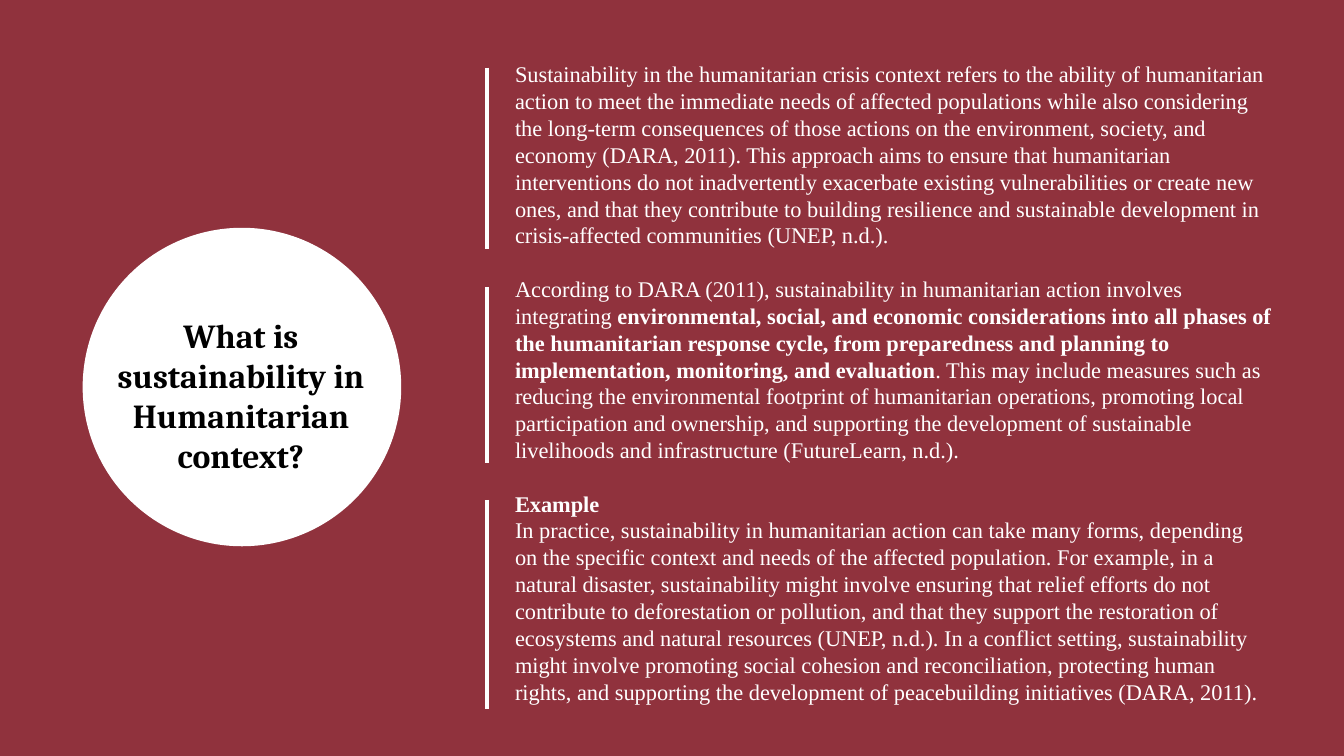
from dataclasses import dataclass

import lxml.etree
import pptx
import pptx.dml.color
import pptx.enum.shapes
import pptx.enum.text
import pptx.oxml.ns
import pptx.util

Inches = pptx.util.Inches
Pt = pptx.util.Pt
Color = pptx.dml.color.RGBColor


@dataclass(frozen=True)
class Theme:
    background: Color = Color(0x90, 0x32, 0x3D)
    light: Color = Color(0xFF, 0xFF, 0xFF)
    dark: Color = Color(0, 0, 0)
    title_font: str = "Cambria"
    body_font: str = "Times New Roman"
    title_size: int = 24
    body_size: int = 16
    section_gap: float = 19
    rule_width: float = 2.25


@dataclass(frozen=True)
class Span:
    text: str
    bold: bool = False


@dataclass(frozen=True)
class Passage:
    spans: tuple[Span, ...]
    opens_section: bool = False


@dataclass(frozen=True)
class Rule:
    top: float
    bottom: float


THEME = Theme()
WIDTH, HEIGHT = 13.33, 7.5
RULE_X = 4.83
RULES = (Rule(0.67, 2.47), Rule(2.85, 4.59), Rule(4.96, 7.03))
TITLE = Passage((Span("What is sustainability in Humanitarian context?", True),))
PASSAGES = (
    Passage((Span(
        "Sustainability in the humanitarian crisis context refers to the ability of "
        "humanitarian action to meet the immediate needs of affected populations while "
        "also considering the long-term consequences of those actions on the environment, "
        "society, and economy (DARA, 2011). This approach aims to ensure that humanitarian "
        "interventions do not inadvertently exacerbate existing vulnerabilities or create "
        "new ones, and that they contribute to building resilience and sustainable "
        "development in crisis-affected communities (UNEP, n.d.)."),)),
    Passage((
        Span("According to DARA (2011), sustainability in humanitarian action involves "
             "integrating "),
        Span("environmental, social, and economic considerations into all phases of the "
             "humanitarian response cycle, from preparedness and planning to "
             "implementation, monitoring, and evaluation", True),
        Span(". This may include measures such as reducing the environmental footprint of "
             "humanitarian operations, promoting local participation and ownership, and "
             "supporting the development of sustainable livelihoods and infrastructure "
             "(FutureLearn, n.d.)."),
    ), opens_section=True),
    Passage((Span("Example", True),), opens_section=True),
    Passage((Span(
        "In practice, sustainability in humanitarian action can take many forms, depending "
        "on the specific context and needs of the affected population. For example, in a "
        "natural disaster, sustainability might involve ensuring that relief efforts do not "
        "contribute to deforestation or pollution, and that they support the restoration of "
        "ecosystems and natural resources (UNEP, n.d.). In a conflict setting, "
        "sustainability might involve promoting social cohesion and reconciliation, "
        "protecting human rights, and supporting the development of peacebuilding "
        "initiatives (DARA, 2011)."),)),
)


def add_filled_shape(page, kind, left: float, top: float, width: float, height: float,
                     color: Color) -> None:
    shape = page.shapes.add_shape(
        kind, Inches(left), Inches(top), Inches(width), Inches(height))
    shape.shadow.inherit = False
    shape.fill.solid()
    shape.fill.fore_color.rgb = color
    shape.line.fill.background()


def add_text(page, left: float, top: float, width: float, height: float,
             passages: tuple[Passage, ...], font: str, size: float, color: Color,
             alignment) -> None:
    box = page.shapes.add_textbox(
        Inches(left), Inches(top), Inches(width), Inches(height))
    frame = box.text_frame
    frame.word_wrap = True
    frame.auto_size = pptx.enum.text.MSO_AUTO_SIZE.SHAPE_TO_FIT_TEXT
    for index, passage in enumerate(passages):
        paragraph = frame.add_paragraph() if index else frame.paragraphs[0]
        paragraph.alignment = alignment
        if passage.opens_section:
            paragraph.space_before = Pt(THEME.section_gap)
        paragraph.font.name = font
        paragraph.font.size = Pt(size)
        paragraph.font.color.rgb = color
        if len(passage.spans) == 1:
            paragraph.font.bold = passage.spans[0].bold
        for span in passage.spans:
            run = paragraph.add_run()
            run.text = span.text
            if len(passage.spans) > 1:
                run.font.bold = span.bold


def add_rule(page, rule: Rule) -> None:
    line = page.shapes.add_connector(
        pptx.enum.shapes.MSO_CONNECTOR.STRAIGHT,
        Inches(RULE_X), Inches(rule.top), Inches(RULE_X), Inches(rule.bottom))
    line.line.color.rgb = THEME.light
    line.line.width = Pt(THEME.rule_width)
    properties = line.element.find(pptx.oxml.ns.qn("p:spPr"))
    lxml.etree.SubElement(properties, pptx.oxml.ns.qn("a:effectLst"))


def main() -> None:
    deck = pptx.Presentation()
    deck.slide_width = Inches(WIDTH)
    deck.slide_height = Inches(HEIGHT)
    page = deck.slides.add_slide(deck.slide_layouts[6])
    shapes = pptx.enum.shapes.MSO_SHAPE
    align = pptx.enum.text.PP_ALIGN

    # Backdrop and title circle
    add_filled_shape(page, shapes.RECTANGLE, 0, 0, WIDTH, HEIGHT, THEME.background)
    add_filled_shape(page, shapes.OVAL, 0.82, 2.26, 3.16, 3.16, THEME.light)
    add_text(page, 0.81, 3.07, 3.16, 1.72, (TITLE,), THEME.title_font,
             THEME.title_size, THEME.dark, align.CENTER)

    # Definition, approach and example
    add_text(page, 5.01, 0.55, 7.7, 6.56, PASSAGES, THEME.body_font,
             THEME.body_size, THEME.light, align.LEFT)

    # Section rules
    for rule in RULES:
        add_rule(page, rule)

    deck.save("out.pptx")


if __name__ == "__main__":
    main()
